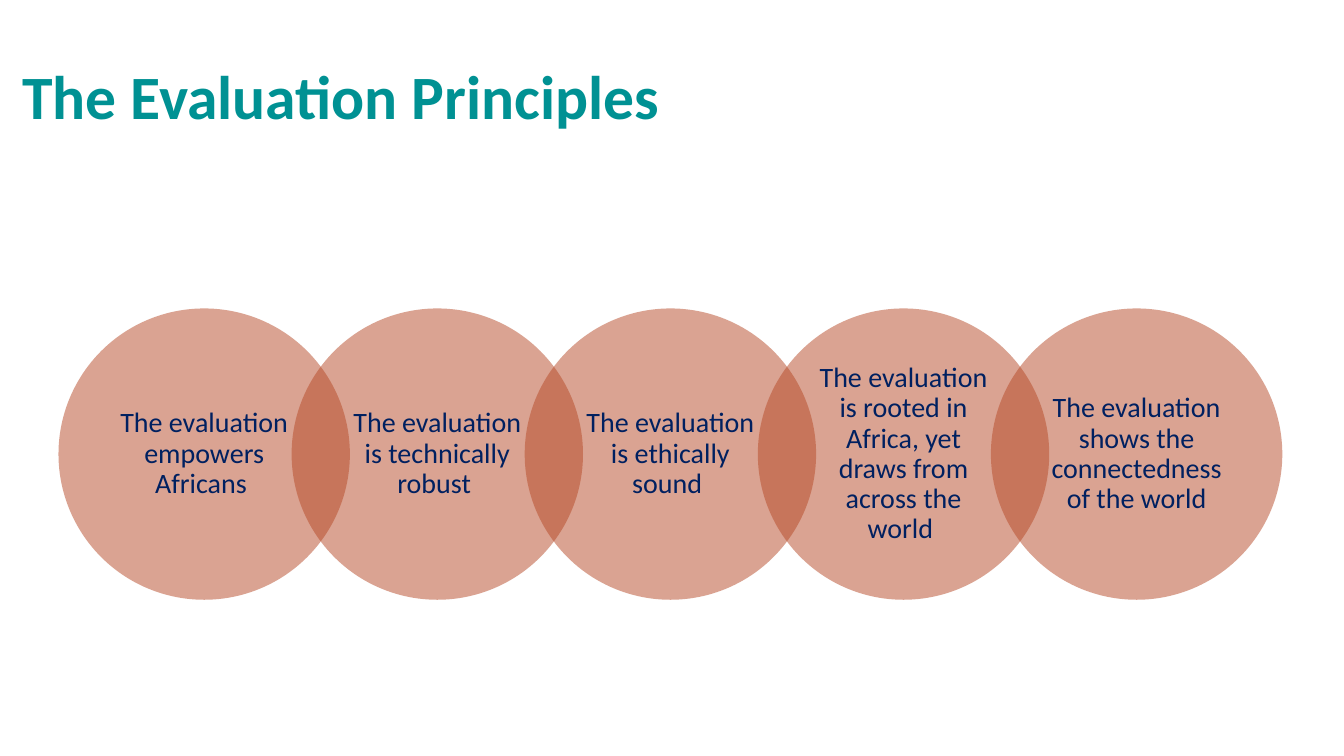
import pptx
import pptx.dml.color
import pptx.enum.shapes
import pptx.enum.text
import pptx.oxml.ns
import pptx.util
from lxml import etree

WIDTH, HEIGHT = 13.33, 7.5
FONT = "Calibri"
TEAL, NAVY, RUST = "009193", "002060", "B64926"

# Row of circles: each one overlaps the next by a fifth of its diameter
DIAMETER = 2.89
STEP = DIAMETER * 0.8
ROW_LEFT, ROW_TOP = 0.58, 3.06
LABEL_SIZE = DIAMETER / 2 ** 0.5  # square inscribed in a circle

PRINCIPLES = [
    "The evaluation empowers Africans ",
    "The evaluation is technically robust ",
    "The evaluation is ethically sound ",
    "The evaluation is rooted in Africa, yet draws from across the world ",
    "The evaluation shows the connectedness of the world",
]


def color(hex_code):
    return pptx.dml.color.RGBColor.from_string(hex_code)


def box(left, top, width, height):
    return [pptx.util.Inches(v) for v in (left, top, width, height)]


def write(tf, text, size, hex_code, align, bold=False):
    tf.text = text
    tf.word_wrap = True
    tf.auto_size = pptx.enum.text.MSO_AUTO_SIZE.NONE
    tf.vertical_anchor = pptx.enum.text.MSO_ANCHOR.MIDDLE
    p = tf.paragraphs[0]
    p.alignment = align
    p.line_spacing = 0.9
    font = p.runs[0].font
    font.name, font.size, font.bold = FONT, pptx.util.Pt(size), bold
    font.color.rgb = color(hex_code)


def add_title(s, text):
    title = s.shapes.title
    title.left, title.top, title.width, title.height = box(0.12, 0.26, 11.5, 1.45)
    write(title.text_frame, text, 44, TEAL, pptx.enum.text.PP_ALIGN.LEFT, bold=True)


def add_circle(shapes, left, top):
    sp = shapes.add_shape(pptx.enum.shapes.MSO_SHAPE.OVAL,
                          *box(left, top, DIAMETER, DIAMETER))
    sp.shadow.inherit = False
    sp.line.fill.background()
    sp.fill.solid()
    sp.fill.fore_color.rgb = color(RUST)
    # Half transparent, so that the overlaps show darker
    fill = sp.fill._xPr.find(pptx.oxml.ns.qn("a:solidFill"))
    etree.SubElement(fill[0], pptx.oxml.ns.qn("a:alpha"), val="50000")


def add_label(shapes, left, top, text):
    inset = (DIAMETER - LABEL_SIZE) / 2
    tf = shapes.add_textbox(
        *box(left + inset, top + inset, LABEL_SIZE, LABEL_SIZE)).text_frame
    tf.margin_left = tf.margin_right = pptx.util.Inches(0.16)
    tf.margin_top = tf.margin_bottom = pptx.util.Inches(0.03)
    write(tf, text, 20, NAVY, pptx.enum.text.PP_ALIGN.CENTER)


def main():
    prs = pptx.Presentation()
    prs.slide_width = pptx.util.Inches(WIDTH)
    prs.slide_height = pptx.util.Inches(HEIGHT)
    s = prs.slides.add_slide(prs.slide_layouts[5])

    add_title(s, "The Evaluation Principles")

    # Chain of principles
    chain = s.shapes.add_group_shape()
    for i, principle in enumerate(PRINCIPLES):
        left = ROW_LEFT + i * STEP
        add_circle(chain.shapes, left, ROW_TOP)
        add_label(chain.shapes, left, ROW_TOP, principle)

    prs.save("out.pptx")


if __name__ == "__main__":
    main()
